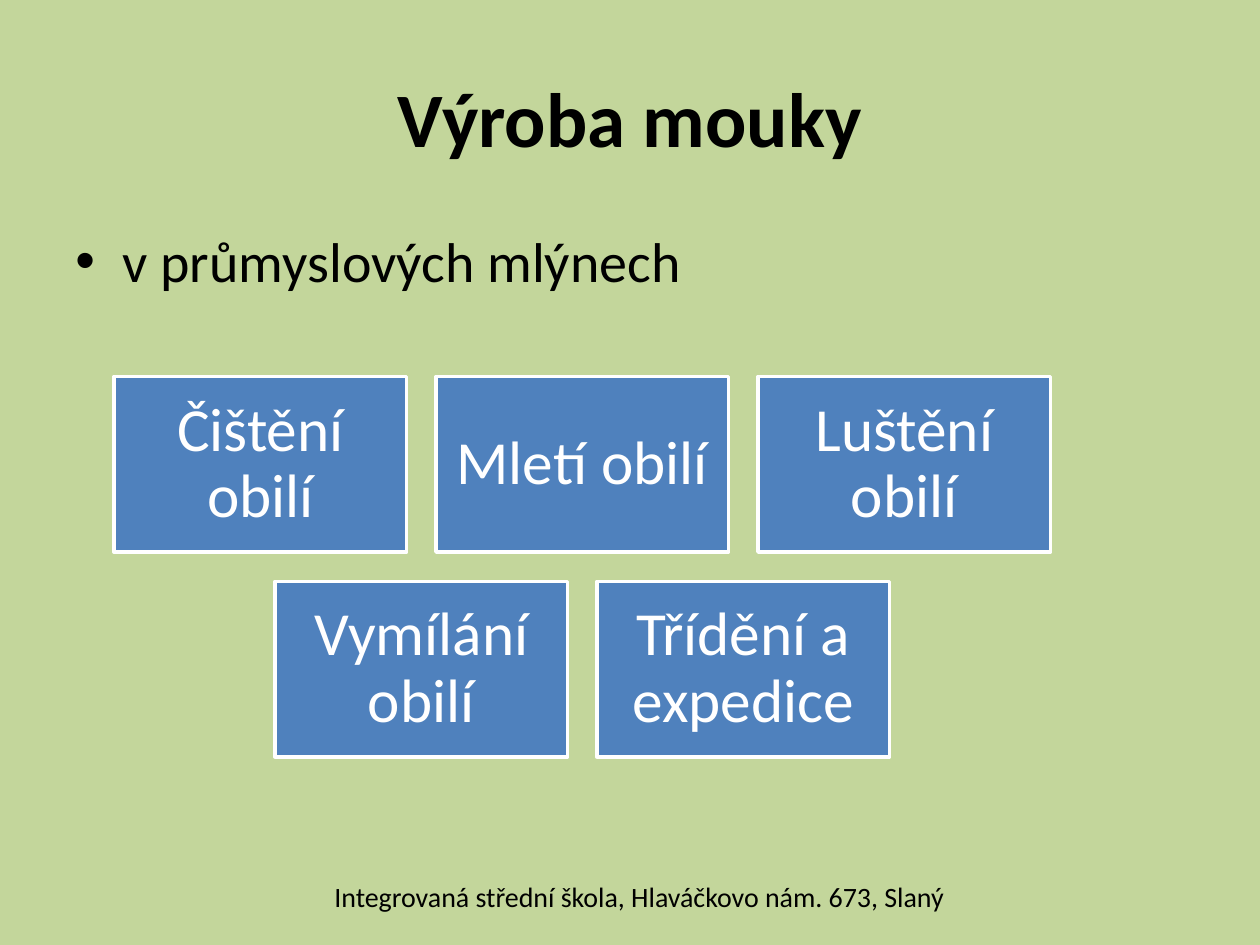
from pptx import Presentation
from pptx.dml.color import RGBColor
from pptx.enum.shapes import MSO_SHAPE
from pptx.enum.text import MSO_ANCHOR, PP_ALIGN
from pptx.oxml import parse_xml
from pptx.oxml.ns import nsdecls
from pptx.util import Cm, Pt

COLORS = {"back": "C3D69B", "box": "4F81BD", "light": "FFFFFF", "dark": "000000"}


class Deck:
    font = "Calibri"

    def __init__(self):
        self.prs = Presentation()
        self.prs.slide_width, self.prs.slide_height = Cm(25.4), Cm(19.05)
        self.slide = self.prs.slides.add_slide(self.prs.slide_layouts[6])
        fill = self.slide.background.fill
        fill.solid()
        fill.fore_color.rgb = self.color("back")

    def color(self, name):
        return RGBColor.from_string(COLORS[name])

    def label(self, shape, text, size, color, align, anchor):
        frame = shape.text_frame
        frame.word_wrap = True
        frame.vertical_anchor = anchor
        para = frame.paragraphs[0]
        para.text = text
        para.alignment = align
        para.font.name, para.font.size = self.font, Pt(size)
        para.font.color.rgb = self.color(color)
        return para

    def text(self, text, area, size, align=PP_ALIGN.CENTER, anchor=MSO_ANCHOR.TOP):
        shape = self.slide.shapes.add_textbox(*map(Cm, area))
        return shape, self.label(shape, text, size, "dark", align, anchor)

    def title(self, text, area):
        _, para = self.text(text, area, 44, anchor=MSO_ANCHOR.MIDDLE)
        para.font.bold = True

    def bullet(self, text, area):
        _, para = self.text(text, area, 32, PP_ALIGN.LEFT)
        props = para._p.get_or_add_pPr()
        indent = Cm(0.95)
        props.set("marL", str(indent))
        props.set("indent", str(-indent))
        # Bullet marks come before the default run style
        marks = (f'<a:buFont {nsdecls("a")} typeface="Arial"/>',
                 f'<a:buChar {nsdecls("a")} char="•"/>')
        for spot, mark in enumerate(marks):
            props.insert(spot, parse_xml(mark))

    def footer(self, text, area):
        shape, _ = self.text(text, area, 16)
        shape.text_frame.margin_top = 0

    def box(self, text, area):
        shape = self.slide.shapes.add_shape(MSO_SHAPE.RECTANGLE, *map(Cm, area))
        shape.shadow.inherit = False
        shape.fill.solid()
        shape.fill.fore_color.rgb = self.color("box")
        shape.line.color.rgb = self.color("light")
        shape.line.width = Pt(2)
        frame = shape.text_frame
        frame.margin_left = frame.margin_right = Cm(0.38)
        frame.margin_top = frame.margin_bottom = Cm(0.38)
        para = self.label(shape, text, 35, "light", PP_ALIGN.CENTER, MSO_ANCHOR.MIDDLE)
        para.line_spacing = 0.9

    def grid(self, rows, mid, top, width, height, gap):
        # Each row is centred on the same axis
        for row, names in enumerate(rows):
            left = mid - (len(names) * (width + gap) - gap) / 2
            for col, name in enumerate(names):
                self.box(name, (left + col * (width + gap),
                                top + row * (height + gap), width, height))


def main():
    deck = Deck()

    # Heading and lead line
    deck.title("Výroba mouky", (1.27, 0.76, 22.86, 3.18))
    deck.bullet("v průmyslových mlýnech", (1.27, 4.45, 22.86, 12.57))

    # Footer
    deck.footer("Integrovaná střední škola, Hlaváčkovo nám. 673, Slaný",
                (5.69, 17.73, 14.4, 1.32))

    # Milling steps
    steps = [["Čištění obilí", "Mletí obilí", "Luštění obilí"],
             ["Vymílání obilí", "Třídění a expedice"]]
    deck.grid(steps, mid=11.74, top=7.59, width=5.9, height=3.54, gap=0.59)

    deck.prs.save("out.pptx")


if __name__ == "__main__":
    main()
